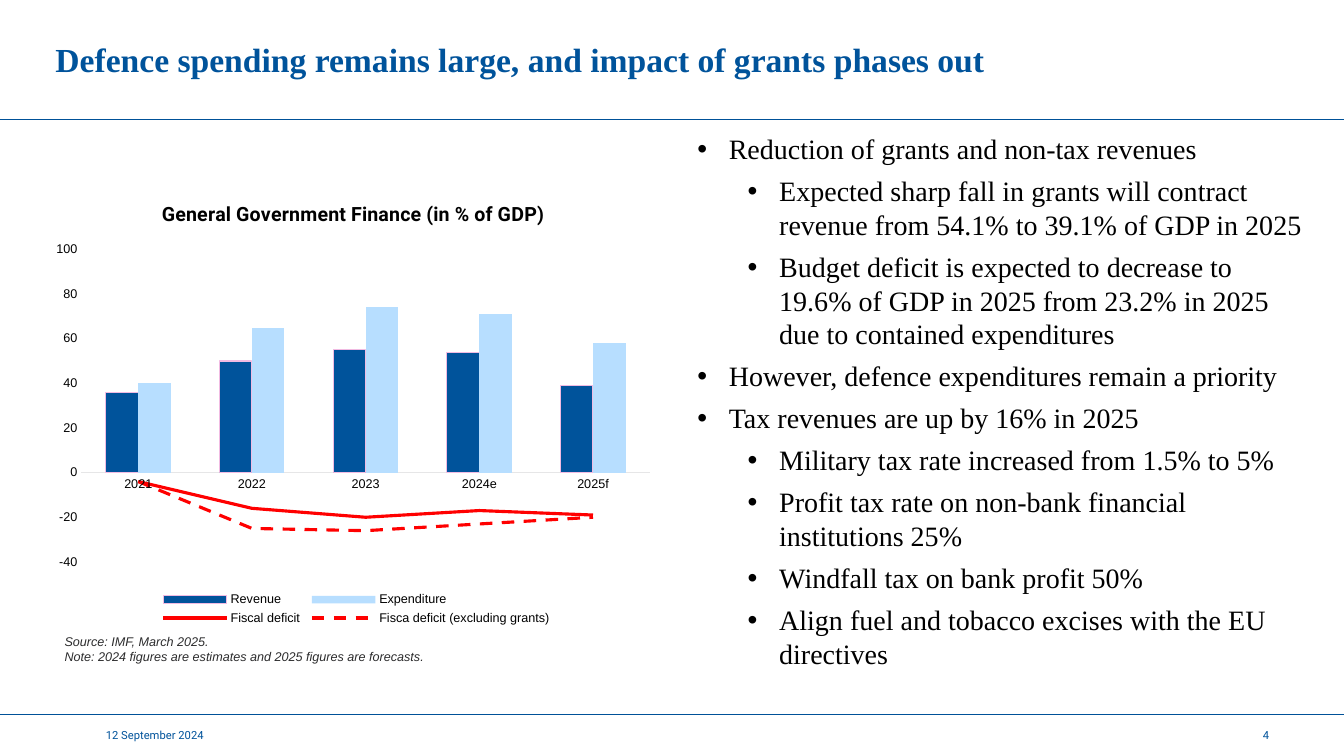
from lxml import etree
from pptx import Presentation
from pptx.chart.data import CategoryChartData as ChartData
from pptx.dml.color import RGBColor
from pptx.enum.chart import XL_CHART_TYPE as Kind, XL_LEGEND_POSITION as Side
from pptx.enum.chart import XL_MARKER_STYLE as Mark, XL_TICK_MARK as Tick
from pptx.enum.dml import MSO_LINE as Dash
from pptx.enum.shapes import MSO_CONNECTOR as Link
from pptx.enum.text import MSO_ANCHOR as Anchor, PP_ALIGN as Align
from pptx.oxml import parse_xml
from pptx.oxml.ns import nsdecls, qn
from pptx.util import Pt

NAVY = RGBColor(0x00, 0x53, 0x9B)
RULE = RGBColor(0x00, 0x51, 0x98)
SKY = RGBColor(0xB7, 0xDE, 0xFF)
PINK = RGBColor(0xF1, 0xBB, 0xE2)
RED = RGBColor(0xFF, 0x00, 0x00)
PALE = RGBColor(0xE6, 0xE6, 0xE7)
GREY = RGBColor(0x2C, 0x2C, 0x2D)
BLACK = RGBColor(0x00, 0x00, 0x00)

WIDE, HIGH = 960, 540
SERIF = "Times New Roman"
TITLE = "Defence spending remains large, and impact of grants phases out"
YEARS = ["2021", "2022", "2023", "2024e", "2025f"]
BARS = [("Revenue", [36, 50, 55, 54, 39], NAVY),
        ("Expenditure", [40, 65, 74, 71, 58], SKY)]
LINES = [("Fiscal deficit", [-4, -16, -20, -17, -19], Dash.SOLID),
         ("Fisca deficit (excluding grants)", [-4, -25, -26, -23, -20], Dash.DASH)]
POINTS = [
    (0, "Reduction of grants and non-tax revenues"),
    (1, "Expected sharp fall in grants will contract revenue from 54.1% to 39.1% of GDP in 2025"),
    (1, "Budget deficit is expected to decrease to 19.6% of GDP in 2025 from 23.2% in 2025 "
        "due to contained expenditures"),
    (0, "However, defence expenditures remain a priority"),
    (0, "Tax revenues are up by 16% in 2025"),
    (1, "Military tax rate increased from 1.5% to 5%"),
    (1, "Profit tax rate on non-bank financial institutions 25%"),
    (1, "Windfall tax on bank profit 50%"),
    (1, "Align fuel and tobacco excises with the EU directives"),
]
NOTES = ["Source: IMF, March 2025.",
         "Note: 2024 figures are estimates and 2025 figures are forecasts."]


def style(font, name, size, color, bold=False, italic=False):
    """Set every property of a font."""
    font.name, font.size, font.bold, font.italic = name, Pt(size), bold, italic
    font.color.rgb = color


def frame(slide, box, inset=True):
    """Add a wrapping text box, without insets if asked, and return its frame."""
    text = slide.shapes.add_textbox(*map(Pt, box)).text_frame
    text.word_wrap = True
    if not inset:
        text.margin_left = text.margin_right = text.margin_top = text.margin_bottom = 0
        text.vertical_anchor = Anchor.MIDDLE
    return text


def label(slide, box, words, name, size, bold=False, align=Align.LEFT):
    """Add one line of blue text, centred in the height of its box."""
    para = frame(slide, box, False).paragraphs[0]
    para.text, para.alignment = words, align
    style(para.font, name, size, NAVY, bold)


def rule(slide, top):
    """Draw a thin line across the slide."""
    line = slide.shapes.add_connector(Link.STRAIGHT, 0, Pt(top), Pt(WIDE), Pt(top))
    line.line.color.rgb, line.line.width = RULE, Pt(0.25)
    etree.SubElement(line._element.spPr, qn("a:effectLst"))


def header(slide, box):
    """Place the title and the rule under it."""
    left, top, width, height = box
    label(slide, (left + 39.6, top, 732, height), TITLE, SERIF, 24, True)
    rule(slide, top + height)


def footer(slide, box):
    """Place the date and page number under a rule."""
    left, top, width, height = box
    rule(slide, top)
    label(slide, (left + 75.6, top, 196, height), "12 September 2024", "Roboto", 8)
    label(slide, (left + width - 91, top, 37.5, height), "4", "Roboto", 8, align=Align.RIGHT)


def place(item, left, top, width, height, inner=False):
    """Fix a chart part at fractions of the chart area."""
    for old in item.findall(qn("c:layout")):
        item.remove(old)
    target = '<c:layoutTarget val="inner"/>' if inner else ""
    sizes = "".join(f'<c:{tag} val="{val}"/>' for tag, val in
                    zip("xywh", (left, top, width, height)))
    node = parse_xml(f'<c:layout {nsdecls("c")}><c:manualLayout>{target}'
                     '<c:xMode val="edge"/><c:yMode val="edge"/>'
                     f'{sizes}</c:manualLayout></c:layout>')
    item.insert(0 if inner else 1, node)


def combine(chart):
    """Move the deficit series from the columns to a line plot on the same axes."""
    bar = chart.plots[0]._element
    line = parse_xml(f'<c:lineChart {nsdecls("c")}><c:grouping val="standard"/>'
                     '<c:varyColors val="0"/></c:lineChart>')
    for ser in bar.findall(qn("c:ser"))[len(BARS):]:
        for flag in ser.findall(qn("c:invertIfNegative")):
            ser.remove(flag)
        line.append(ser)
    etree.SubElement(line, qn("c:marker")).set("val", "1")
    for axis in bar.findall(qn("c:axId")):
        etree.SubElement(line, qn("c:axId")).set("val", axis.get("val"))
    bar.addnext(line)


def finance(slide, box):
    """Build the column and line chart of government finance."""
    data = ChartData()
    data.categories = YEARS
    for name, vals, _ in BARS + LINES:
        data.add_series(name, vals)
    chart = slide.shapes.add_chart(Kind.COLUMN_CLUSTERED, *map(Pt, box), data).chart
    style(chart.font, "Arial", 9, BLACK)
    chart.has_title = True
    para = chart.chart_title.text_frame.paragraphs[0]
    para.text = "General Government Finance (in % of GDP)"
    style(para.font, "Roboto", 14, BLACK, True)
    chart.has_legend = True
    chart.legend.position, chart.legend.include_in_layout = Side.BOTTOM, False
    style(chart.legend.font, "Arial", 9, BLACK)

    combine(chart)
    cols, trend = chart.plots
    cols.gap_width, cols.overlap, cols.vary_by_categories = 150, 0, False
    for ser, (_, _, color) in zip(cols.series, BARS):
        ser.invert_if_negative = False
        ser.format.fill.solid()
        ser.format.fill.fore_color.rgb = color
    edge = cols.series[0].format.line
    edge.color.rgb, edge.width = PINK, Pt(0.75)
    for ser, (_, _, dash) in zip(trend.series, LINES):
        ser.smooth, ser.marker.style = False, Mark.NONE
        line = ser.format.line
        line.color.rgb, line.width, line.dash_style = RED, Pt(2.25), dash

    for axis in (chart.category_axis, chart.value_axis):
        axis.major_tick_mark = axis.minor_tick_mark = Tick.NONE
        axis.has_major_gridlines = False
        style(axis.tick_labels.font, "Arial", 9, BLACK)
    base = chart.category_axis.format.line
    base.color.rgb, base.width = PALE, Pt(0.75)
    scale = chart.value_axis
    scale.format.line.fill.background()
    scale.minimum_scale, scale.maximum_scale, scale.major_unit = -40, 100, 20
    scale.tick_labels.number_format, scale.tick_labels.number_format_is_linked = "0", False
    place(cols._element.getparent(), 0.06, 0.15, 0.92, 0.7, True)
    place(chart.legend._element, 0.18, 0.91, 0.65, 0.09)


def source(slide, box):
    """Write the source and note under the chart."""
    text = frame(slide, box)
    for num, words in enumerate(NOTES):
        para = text.add_paragraph() if num else text.paragraphs[0]
        para.text = words
        style(para.font, "Arial", 9, GREY, italic=True)


def bullets(slide, box):
    """Write the two-level list of findings."""
    text = frame(slide, box)
    for num, (level, words) in enumerate(POINTS):
        para = text.add_paragraph() if num else text.paragraphs[0]
        para.text, para.level, para.space_after = words, level, Pt(6)
        props = para._p.get_or_add_pPr()
        props.set("marL", str(Pt(22.5 + 36 * level)))
        props.set("indent", str(Pt(-22.5)))
        etree.SubElement(props, qn("a:buFont")).set("typeface", "Arial")
        etree.SubElement(props, qn("a:buChar")).set("char", "•")
        style(para.font, SERIF, 20, BLACK)


def main():
    """Build and save the slide."""
    deck = Presentation()
    deck.slide_width, deck.slide_height = Pt(WIDE), Pt(HIGH)
    slide = deck.slides.add_slide(deck.slide_layouts[6])
    header(slide, (0, 0, WIDE, 85))
    finance(slide, (31.7, 130.3, 441.4, 319))
    source(slide, (39, 449.3, 453, 29))
    bullets(slide, (491, 90.7, 453, 395))
    footer(slide, (0, 510.3, WIDE, 29.7))
    deck.save("out.pptx")


if __name__ == "__main__":
    main()
